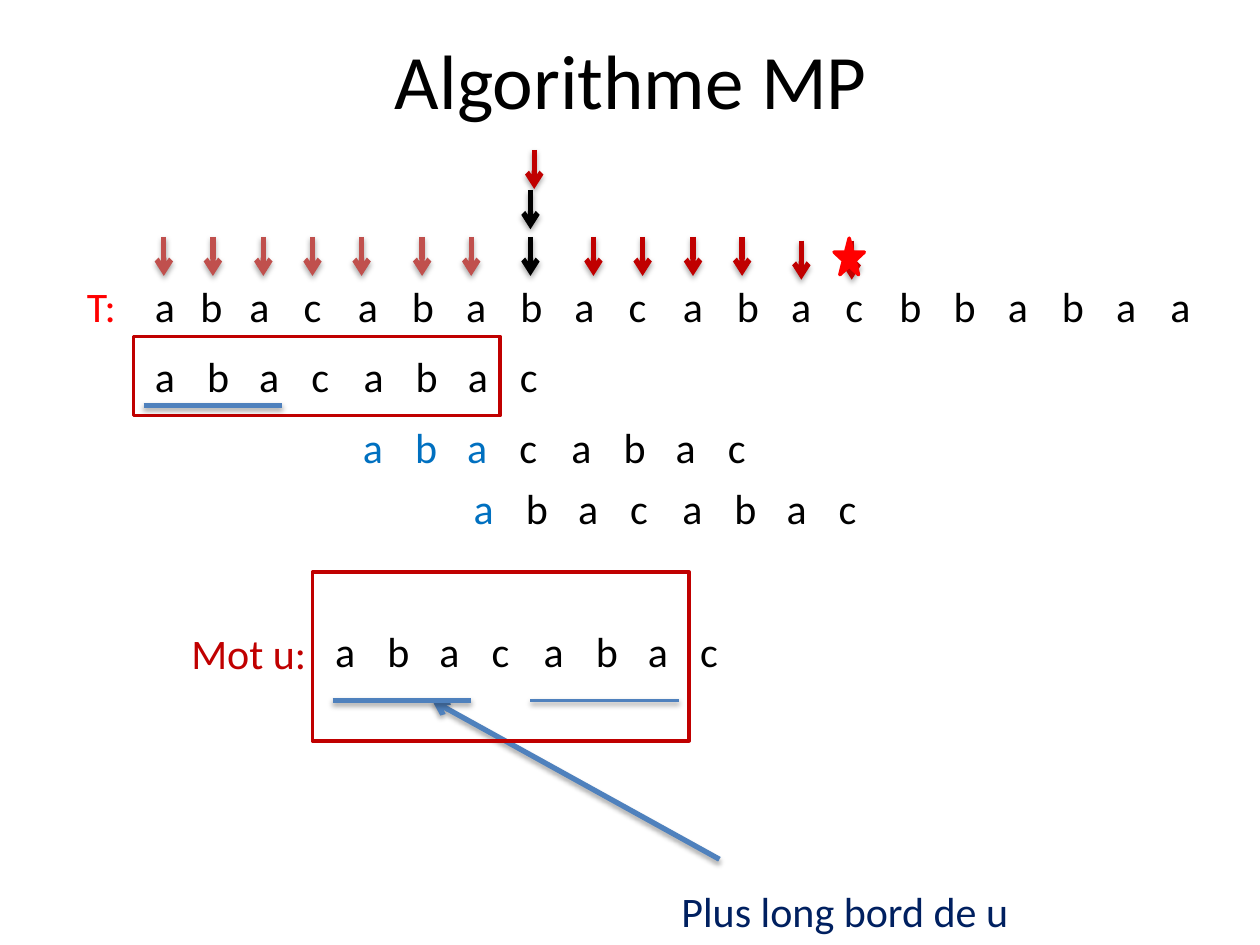
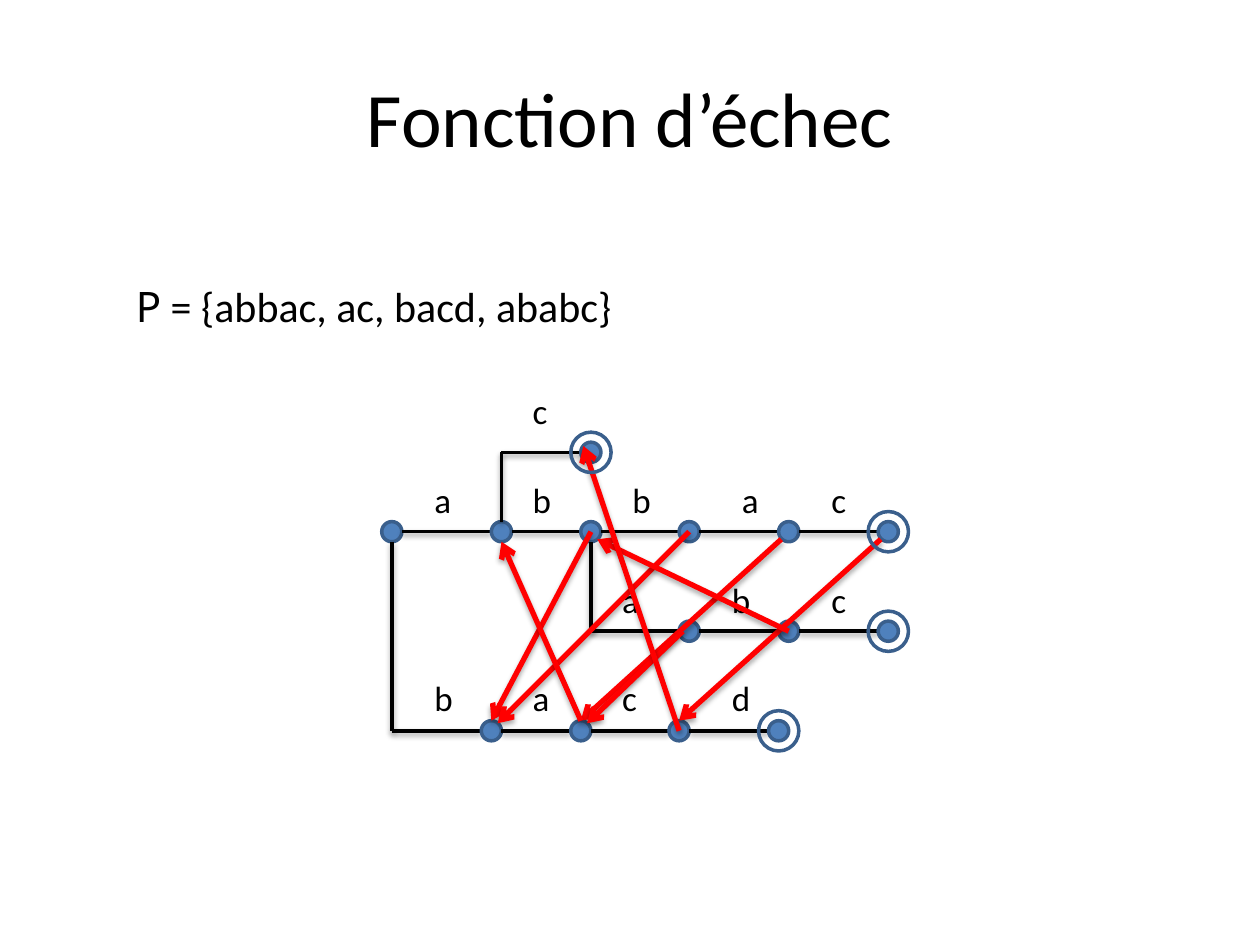
from lxml import etree
from pptx import Presentation
from pptx.dml.color import RGBColor
from pptx.enum.shapes import MSO_CONNECTOR, MSO_SHAPE
from pptx.enum.text import MSO_ANCHOR, MSO_AUTO_SIZE, PP_ALIGN
from pptx.oxml.ns import qn
from pptx.util import Inches, Pt

# Enum members
STRAIGHT = MSO_CONNECTOR.STRAIGHT
RECTANGLE = MSO_SHAPE.RECTANGLE
OVAL = MSO_SHAPE.OVAL
STAR = MSO_SHAPE.STAR_5_POINT
MIDDLE = MSO_ANCHOR.MIDDLE
CENTER = PP_ALIGN.CENTER
FIT_SHAPE = MSO_AUTO_SIZE.SHAPE_TO_FIT_TEXT

# Colours and fonts
BLACK = RGBColor(0x00, 0x00, 0x00)
RED = RGBColor(0xFF, 0x00, 0x00)
DARK_RED = RGBColor(0xC0, 0x00, 0x00)
SOFT_RED = RGBColor(0xC0, 0x50, 0x4D)
BLUE = RGBColor(0x4F, 0x81, 0xBD)
NODE_BORDER = RGBColor(0x3A, 0x5F, 0x8C)
BRIGHT_BLUE = RGBColor(0x00, 0x70, 0xC0)
NAVY = RGBColor(0x00, 0x20, 0x60)
FONT = "Calibri"
SYMBOL_FONT = "Noto Sans"
PLAIN_TABLE_STYLE = "{2D5ABB26-0587-4C30-8999-92F81FD0307C}"

# Word search
TEXT = "abacababacabacbbabaa"
WORD = "abacabac"
ROW_HEIGHT = 0.63
WORD_COLUMN = 0.414

# Trie: stem x (None for the root row), row y, letters, letter x, letter top, node x
ROOT_X, ROOT_Y = 3.11, 4.22
NODE_RADIUS, RING_RADIUS = 0.08, 0.16
BRANCHES = [
    (None, ROOT_Y, "abbac", (3.35, 4.13, 4.92, 5.79, 6.5), 3.75,
     (3.98, 4.69, 5.47, 6.26, 7.05)),
    (3.98, 3.59, "c", (4.13,), 3.04, (4.69,)),
    (4.69, 5.01, "abc", (4.84, 5.71, 6.5), 4.54, (5.47, 6.26, 7.05)),
    (ROOT_X, 5.8, "bacd", (3.35, 4.13, 4.84, 5.71), 5.32,
     (3.9, 4.61, 5.39, 6.18)),
]
FAILURE_LINKS = [
    ((6.2, 4.28), (4.61, 5.72)),
    ((4.69, 4.22), (3.9, 5.72)),
    ((5.47, 4.22), (3.95, 5.74)),
    ((6.99, 4.28), (5.39, 5.72)),
    ((5.42, 5.01), (4.66, 5.74)),
    ((6.26, 5.01), (4.74, 4.28)),
    ((4.61, 5.72), (3.98, 4.3)),
    ((5.39, 5.8), (4.63, 3.54)),
]


def style_font(font, size, color=BLACK, name=FONT):
    font.size = Pt(size)
    font.name = name
    font.color.rgb = color


def add_label(slide, text, left, top, width, height, size, color=BLACK):
    box = slide.shapes.add_textbox(
        Inches(left), Inches(top), Inches(width), Inches(height))
    frame = box.text_frame
    frame.word_wrap = False
    frame.auto_size = FIT_SHAPE
    paragraph = frame.paragraphs[0]
    paragraph.text = text
    style_font(paragraph.font, size, color)
    return paragraph


def add_title(slide, text, left, top):
    box = slide.shapes.add_textbox(
        Inches(left), Inches(top), Inches(9), Inches(1.25))
    frame = box.text_frame
    frame.word_wrap = True
    frame.vertical_anchor = MIDDLE
    paragraph = frame.paragraphs[0]
    paragraph.text = text
    paragraph.alignment = CENTER
    style_font(paragraph.font, 44)


def add_line(slide, start, end, color, width=3, arrow=False):
    """Draw a straight line with a soft shadow below it."""
    points = [Inches(value) for value in (*start, *end)]
    line = slide.shapes.add_connector(STRAIGHT, *points)
    line.line.color.rgb = color
    line.line.width = Pt(width)
    if arrow:
        etree.SubElement(line.line._get_or_add_ln(), qn("a:tailEnd"), type="arrow")
    effects = etree.SubElement(line._element.spPr, qn("a:effectLst"))
    shadow = etree.SubElement(
        effects, qn("a:outerShdw"), blurRad=str(Pt(3.1)), dist=str(Pt(1.8)),
        dir="5400000", rotWithShape="0")
    shade = etree.SubElement(shadow, qn("a:srgbClr"), val=str(BLACK))
    etree.SubElement(shade, qn("a:alpha"), val="35000")


def add_figure(slide, kind, left, top, width, height, border, fill=None):
    shape = slide.shapes.add_shape(
        kind, Inches(left), Inches(top), Inches(width), Inches(height))
    shape.shadow.inherit = False
    if fill is None:
        shape.fill.background()
    else:
        shape.fill.solid()
        shape.fill.fore_color.rgb = fill
    shape.line.color.rgb = border
    shape.line.width = Pt(2)


def add_circle(slide, x, y, radius, fill=None):
    add_figure(slide, OVAL, x - radius, y - radius, 2 * radius, 2 * radius,
               NODE_BORDER, fill)


def add_letter_row(slide, letters, left, top, widths, colors):
    frame = slide.shapes.add_table(
        1, len(letters), Inches(left), Inches(top),
        Inches(sum(widths)), Inches(ROW_HEIGHT))
    table = frame.table
    table.first_row = False
    table.horz_banding = False
    table._tbl.tblPr.find(qn("a:tableStyleId")).text = PLAIN_TABLE_STYLE
    for index, (letter, width, color) in enumerate(zip(letters, widths, colors)):
        table.columns[index].width = Inches(width)
        cell = table.cell(0, index)
        cell.fill.background()
        paragraph = cell.text_frame.paragraphs[0]
        paragraph.text = letter
        style_font(paragraph.font, 24, color)


def add_word(slide, left, top, matched=0):
    """Write the word, its first matched letters in blue."""
    count = len(WORD)
    colors = [BRIGHT_BLUE] * matched + [BLACK] * (count - matched)
    add_letter_row(slide, WORD, left, top, [WORD_COLUMN] * count, colors)


def add_down_arrows(slide, positions, top, color):
    for x in positions:
        add_line(slide, (x, top), (x, top + 0.31), color, arrow=True)


def build_search(slide):
    add_title(slide, "Algorithme MP", 0.51, 0)

    # Text and the successive positions of the word
    widths = [0.54, 0.36, 0.39] + [0.43] * (len(TEXT) - 2)
    add_letter_row(slide, ["T:", *TEXT], 0.59, 2.19, widths,
                   [RED] + [BLACK] * len(TEXT))
    for left, top, matched in [(1.13, 2.75, 0), (2.56, 4.93, 0),
                               (2.78, 3.31, 3), (3.66, 3.8, 1)]:
        add_word(slide, left, top, matched)

    # Comparisons
    add_down_arrows(slide, (1.3, 1.69, 2.09, 2.48, 2.87, 3.35, 3.74), 1.88, SOFT_RED)
    for top in (1.88, 1.51):
        add_down_arrows(slide, (4.21,), top, BLACK)
    add_down_arrows(slide, (4.24,), 1.19, DARK_RED)
    add_down_arrows(slide, (4.71, 5.1, 5.5, 5.89), 1.88, DARK_RED)
    add_down_arrows(slide, (6.36, 6.76), 1.91, DARK_RED)
    add_figure(slide, STAR, 6.62, 1.89, 0.24, 0.29, RED, RED)

    # Borders of the word
    add_line(slide, (5.71, 6.82), (3.43, 5.56), BLUE, arrow=True)
    add_label(slide, "Plus long bord de u", 5.31, 6.98, 2.89, 0.5, 24, NAVY)
    add_label(slide, "Mot u:", 1.42, 4.93, 1.12, 0.5, 24, DARK_RED)
    add_figure(slide, RECTANGLE, 1.06, 2.67, 2.91, 0.63, DARK_RED)
    add_figure(slide, RECTANGLE, 2.48, 4.54, 2.99, 1.34, DARK_RED)
    add_line(slide, (4.21, 5.56), (5.39, 5.56), BLUE, 2)
    for left, y in [(2.64, 5.56), (1.14, 3.22)]:
        add_line(slide, (left, y), (left + 1.1, y), BLUE)


def add_branch(slide, stem_x, y, letters, letter_lefts, letter_top, nodes):
    """Draw one row of the trie, with the stem that joins it to its parent."""
    if stem_x is None:
        add_circle(slide, ROOT_X, y, NODE_RADIUS, BLUE)
        start = ROOT_X + NODE_RADIUS
    else:
        offset = NODE_RADIUS if y > ROOT_Y else -NODE_RADIUS
        add_line(slide, (stem_x, ROOT_Y + offset), (stem_x, y), BLACK, 2)
        start = stem_x
    for letter, left, x in zip(letters, letter_lefts, nodes):
        add_line(slide, (start, y), (x - NODE_RADIUS, y), BLACK, 2)
        add_circle(slide, x, y, NODE_RADIUS, BLUE)
        add_label(slide, letter, left, letter_top, 0.34, 0.44, 20)
        start = x + NODE_RADIUS


def build_failure_function(slide):
    add_title(slide, "Fonction d’échec", 0.5, 0.3)

    # Set of words
    paragraph = add_label(slide, "", 0.98, 2.18, 4.07, 0.5, 24)
    for text, font_name in [("P", SYMBOL_FONT),
                            (" = {abbac, ac, bacd, ababc}", FONT)]:
        run = paragraph.add_run()
        run.text = text
        style_font(run.font, 24, name=font_name)

    # Trie, failure links and final states
    for branch in BRANCHES:
        add_branch(slide, *branch)
    for start, end in FAILURE_LINKS:
        add_line(slide, start, end, RED, arrow=True)
    for _, y, _, _, _, nodes in BRANCHES:
        add_circle(slide, nodes[-1], y, RING_RADIUS)


def main():
    presentation = Presentation()
    presentation.slide_width = Inches(10)
    presentation.slide_height = Inches(7.5)
    blank = presentation.slide_layouts[6]
    for build in (build_search, build_failure_function):
        build(presentation.slides.add_slide(blank))
    presentation.save("out.pptx")


if __name__ == "__main__":
    main()
